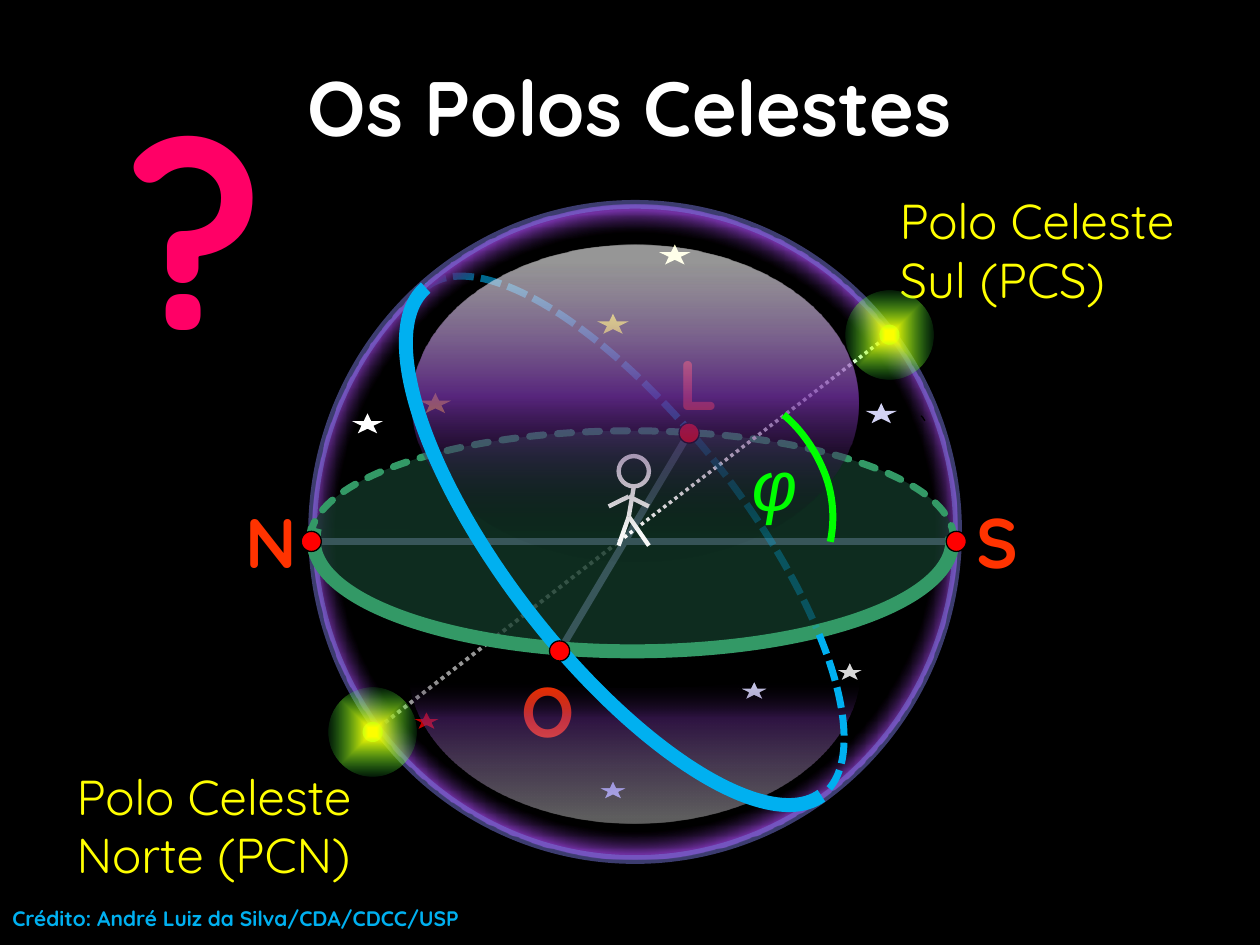
from lxml import etree
from pptx import Presentation
from pptx.dml.color import RGBColor
from pptx.enum.dml import MSO_LINE_DASH_STYLE as Dash
from pptx.enum.shapes import MSO_CONNECTOR, MSO_SHAPE as Shape
from pptx.enum.text import MSO_ANCHOR as Anchor, MSO_AUTO_SIZE as AutoSize, PP_ALIGN as Align
from pptx.oxml import parse_xml
from pptx.oxml.ns import nsdecls, qn
from pptx.util import Pt

BLACK = RGBColor(0x00, 0x00, 0x00)
WHITE = RGBColor(0xFF, 0xFF, 0xFF)
YELLOW = RGBColor(0xFF, 0xFF, 0x00)
CREAM = RGBColor(0xFF, 0xFF, 0xCC)
AMBER = RGBColor(0xFF, 0xC0, 0x00)
RED = RGBColor(0xFF, 0x00, 0x00)
DARK_RED = RGBColor(0xC0, 0x00, 0x00)
ORANGE = RGBColor(0xFF, 0x33, 0x00)
PINK = RGBColor(0xFF, 0x00, 0x66)
PURPLE = RGBColor(0x70, 0x30, 0xA0)
VIOLET = RGBColor(0x78, 0x78, 0xDE)
LILAC = RGBColor(0x85, 0x85, 0xE0)
LAVENDER = RGBColor(0xA5, 0xA5, 0xE9)
PALE = RGBColor(0xD2, 0xD2, 0xF4)
GREY = RGBColor(0xD9, 0xD9, 0xD9)
BLUE = RGBColor(0x00, 0xB0, 0xF0)
GREEN = RGBColor(0x33, 0x99, 0x66)
DARK_GREEN = RGBColor(0x14, 0x3C, 0x2B)
LIME = RGBColor(0x00, 0xFF, 0x00)
GLOW = RGBColor(0x21, 0xFF, 0x46)


class Sketch:
    font = "Quicksand"

    def __init__(self, page):
        self.shapes = page.shapes

    def stroke(self, line, color, width, dash=None, alpha=100):
        if color is None:
            line.fill.background()
            return
        line.color.rgb = color
        line.width = Pt(width)
        if dash:
            line.dash_style = dash
        self.fade(line.fill, alpha)

    def fade(self, fill, alpha):
        if alpha < 100:
            color = fill._xPr.find(qn("a:solidFill"))[0]
            etree.SubElement(color, qn("a:alpha"), val=str(alpha * 1000))

    def paint(self, shape, fill, alpha=100):
        shape.shadow.inherit = False
        if fill is None:
            shape.fill.background()
        else:
            shape.fill.solid()
            shape.fill.fore_color.rgb = fill
            self.fade(shape.fill, alpha)

    def shape(self, kind, box, fill=None, line=None, width=0.75, dash=None,
              alpha=100, turn=0, adjust=()):
        item = self.shapes.add_shape(kind, *map(Pt, box))
        for index, value in enumerate(adjust):
            item.adjustments[index] = value
        item.rotation = turn
        self.paint(item, fill)
        self.stroke(item.line, line, width, dash, alpha)
        return item

    def disc(self, center, size, **style):
        x, y = center
        return self.shape(Shape.OVAL, (x - size / 2, y - size / 2, size, size), **style)

    def gradient(self, shape, stops, angle=None, path="circle"):
        """Stops are (position, colour, opacity); no angle means radial."""
        marks = "".join(
            f'<a:gs pos="{place * 1000}"><a:srgbClr val="{color}">'
            f'<a:alpha val="{alpha * 1000}"/></a:srgbClr></a:gs>'
            for place, color, alpha in stops)
        if angle is None:
            spread = (f'<a:path path="{path}"><a:fillToRect l="50000" t="50000" '
                      'r="50000" b="50000"/></a:path>')
        else:
            spread = f'<a:lin ang="{angle * 60000}" scaled="0"/>'
        properties = shape._element.spPr
        properties.replace(properties.find(qn("a:noFill")), parse_xml(
            f'<a:gradFill {nsdecls("a")} rotWithShape="1">'
            f'<a:gsLst>{marks}</a:gsLst>{spread}</a:gradFill>'))

    def line(self, start, end, color, width, dash=None):
        item = self.shapes.add_connector(
            MSO_CONNECTOR.STRAIGHT, *map(Pt, (*start, *end)))
        self.stroke(item.line, color, width, dash)
        etree.SubElement(item._element.spPr, qn("a:effectLst"))

    def curve(self, start, bends, line, width, fill=None, alpha=100, dash=None):
        """Join cubic bends, each given by two controls and an end point."""
        builder = self.shapes.build_freeform(Pt(start[0]), Pt(start[1]))
        builder.add_line_segments(
            [(Pt(x), Pt(y)) for bend in bends for x, y in bend], close=False)
        item = builder.convert_to_shape()
        # Every three straight segments become one cubic segment
        legs = list(item._element.iter(qn("a:lnTo")))
        for first, second, last in zip(legs[::3], legs[1::3], legs[2::3]):
            first.tag = qn("a:cubicBezTo")
            for leg in (second, last):
                first.append(leg[0])
                leg.getparent().remove(leg)
        self.paint(item, fill, alpha)
        self.stroke(item.line, line, width, dash)
        return item

    def text(self, words, box, size, color, bold=False, italic=False, align=Align.LEFT,
             anchor=Anchor.TOP, font=None, turn=0, fit=AutoSize.SHAPE_TO_FIT_TEXT):
        item = self.shapes.add_textbox(*map(Pt, box))
        item.rotation = turn
        frame = item.text_frame
        frame.word_wrap = True
        frame.auto_size = fit
        frame.vertical_anchor = anchor
        frame.text = words
        para = frame.paragraphs[0]
        para.alignment = align
        style = para.runs[0].font
        style.name, style.size = font or self.font, Pt(size)
        style.bold, style.italic = bold, italic
        style.color.rgb = color


def main():
    deck = Presentation()
    deck.slide_width, deck.slide_height = Pt(720), Pt(540)
    page = deck.slides.add_slide(deck.slide_layouts[6])
    page.background.fill.solid()
    page.background.fill.fore_color.rgb = BLACK
    sketch = Sketch(page)

    center = (353.5, 309.6)
    north, south = (177.9, 309.4), (546.5, 309.4)
    east, west = (393.8, 247.5), (319.8, 372)
    south_pole, north_pole = (508.3, 191.3), (213, 418.3)

    def equator(first, last, width=4, dash=Dash.SQUARE_DOT, alpha=100):
        sketch.shape(Shape.ARC, (288.8, 124.9, 136.6, 368), line=BLUE, width=width,
                     dash=dash, alpha=alpha, turn=142.1, adjust=(first, last))

    def point(place):
        sketch.disc(place, 11.5, fill=RED, line=BLACK)

    # Far side of the equator, northern axis and titles
    equator(54, 94.77)
    sketch.line(north_pole, center, WHITE, 2.25, Dash.ROUND_DOT)
    sketch.text("Os Polos Celestes", (0, 15.6, 720, 90), 44, WHITE, bold=True,
                align=Align.CENTER, anchor=Anchor.MIDDLE, fit=AutoSize.NONE)
    sketch.text("Polo Celeste Sul (PCS)", (507, 105.6, 193, 75), 28, YELLOW)
    sketch.text("Polo Celeste Norte (PCN)", (36.7, 434.2, 187.2, 75), 28, YELLOW)

    # Celestial sphere and horizon
    sphere = sketch.shape(Shape.OVAL, (178.6, 116.8, 368.6, 374.4), line=VIOLET,
                          width=5, alpha=50)
    sketch.gradient(sphere, [(65, BLACK, 40), (70, PURPLE, 100)])
    sketch.line(west, east, LAVENDER, 4)
    sketch.line(north, south, LAVENDER, 4)
    horizon = sketch.curve((545, 308.2), [
        ((545, 273.6), (462.2, 246.2), (360.7, 246.2)),
        ((259.2, 246.2), (177.1, 274.3), (177.1, 308.9)),
        ((177.1, 342.7), (259.2, 370.8), (360.7, 370.8)),
        ((463, 370.8), (545, 342.7), (545, 308.9)),
    ], GREEN, 4, DARK_GREEN, 73, Dash.SQUARE_DOT)
    horizon.line._ln.set("cap", "rnd")
    for letter, x, y in (("O", 291, 378), ("N", 133.2, 281.5),
                         ("L", 380.7, 191), ("S", 550.8, 281.5)):
        sketch.text(letter, (x, y, 28, 55.4), 40, ORANGE, bold=True)
    sketch.curve((528.5, 240.5), [((527.8, 239), (527, 238.3), (526.3, 237.6))], BLACK, 0.75)
    sketch.curve((180, 301.7), [
        ((179.3, 303.8), (179.3, 306), (179.3, 308.9)),
        ((179.3, 344.2), (260.6, 372.2), (361.4, 372.2)),
        ((463, 372.2), (544.3, 344.2), (544.3, 308.9)),
        ((544.3, 308.2), (544.3, 307.4), (544.3, 306.7)),
    ], GREEN, 8, DARK_GREEN, 7)
    sketch.line(center, south_pole, WHITE, 2, Dash.ROUND_DOT)
    equator(97.33, 145.46, alpha=30)

    # Observer
    sketch.disc((362.2, 269.3), 17.3, line=WHITE, width=2.5)
    hip, shoulder = (359.3, 295.2), (359.3, 283.7)
    for start, end in (((362.2, 278), hip), (hip, (370.8, 311.8)), (hip, (353.5, 311.8)),
                       (shoulder, (370.8, 289.4)), ((347.8, 289.4), shoulder)):
        sketch.line(start, end, WHITE, 2.5)

    # Stars
    for x, y, color, edge in (
            (422, 388.8, PALE, BLACK), (234.7, 406, DARK_RED, BLACK),
            (341.3, 445.7, LILAC, BLACK), (476.6, 378, GREY, BLACK),
            (494.6, 230.4, PALE, None), (239.8, 224.6, AMBER, None),
            (201, 236.2, WHITE, None), (341.3, 179.3, YELLOW, None),
            (376.6, 139.7, CREAM, None)):
        sketch.shape(Shape.STAR_5_POINT, (x, y, 18, 11.5), fill=color, line=edge)

    # Cardinal points, lower shading and poles
    for place in (east, north, south):
        point(place)
    moon = sketch.shape(Shape.MOON, (318.2, 297.4, 88.6, 257.8), turn=270, adjust=(0.875,))
    sketch.gradient(moon, [(3, WHITE, 37), (68, PURPLE, 41), (94, BLACK, 0)], angle=0)
    for pole in (south_pole, north_pole):
        sketch.disc(pole, 11.5, fill=GLOW, turn=305.7)
        halo = sketch.disc(pole, 50.4, turn=305.7)
        sketch.gradient(halo, [(7, YELLOW, 100), (77, GLOW, 2)], path="shape")

    # Upper shading and near side of the equator
    dome = sketch.shape(Shape.OVAL, (235.4, 139.7, 255, 181.4))
    sketch.gradient(dome, [(6, WHITE, 58), (48, PURPLE, 77), (91, BLACK, 2)], angle=90)
    equator(162.18, 53.8, width=8, dash=None)
    point(west)
    equator(146.21, 161.54)

    # Latitude angle
    sketch.curve((447.8, 237), [((457.2, 244.8), (465, 255.6), (470.2, 267.8)),
                                ((476, 280.8), (477.4, 296), (474.5, 309.6))], LIME, 4)
    sketch.text("φ", (406, 248.4, 73.4, 55.4), 40, LIME, italic=True,
                align=Align.CENTER, font="Arial", turn=358.6)

    # Question mark and credit
    sketch.text("?", (65.5, 35.3, 90.7, 189.4), 150, PINK, bold=True, align=Align.CENTER)
    sketch.text("Crédito: André Luiz da Silva/CDA/CDCC/USP", (0, 514, 740, 21.6), 12, BLUE,
                bold=True)
    deck.save("out.pptx")


if __name__ == "__main__":
    main()
